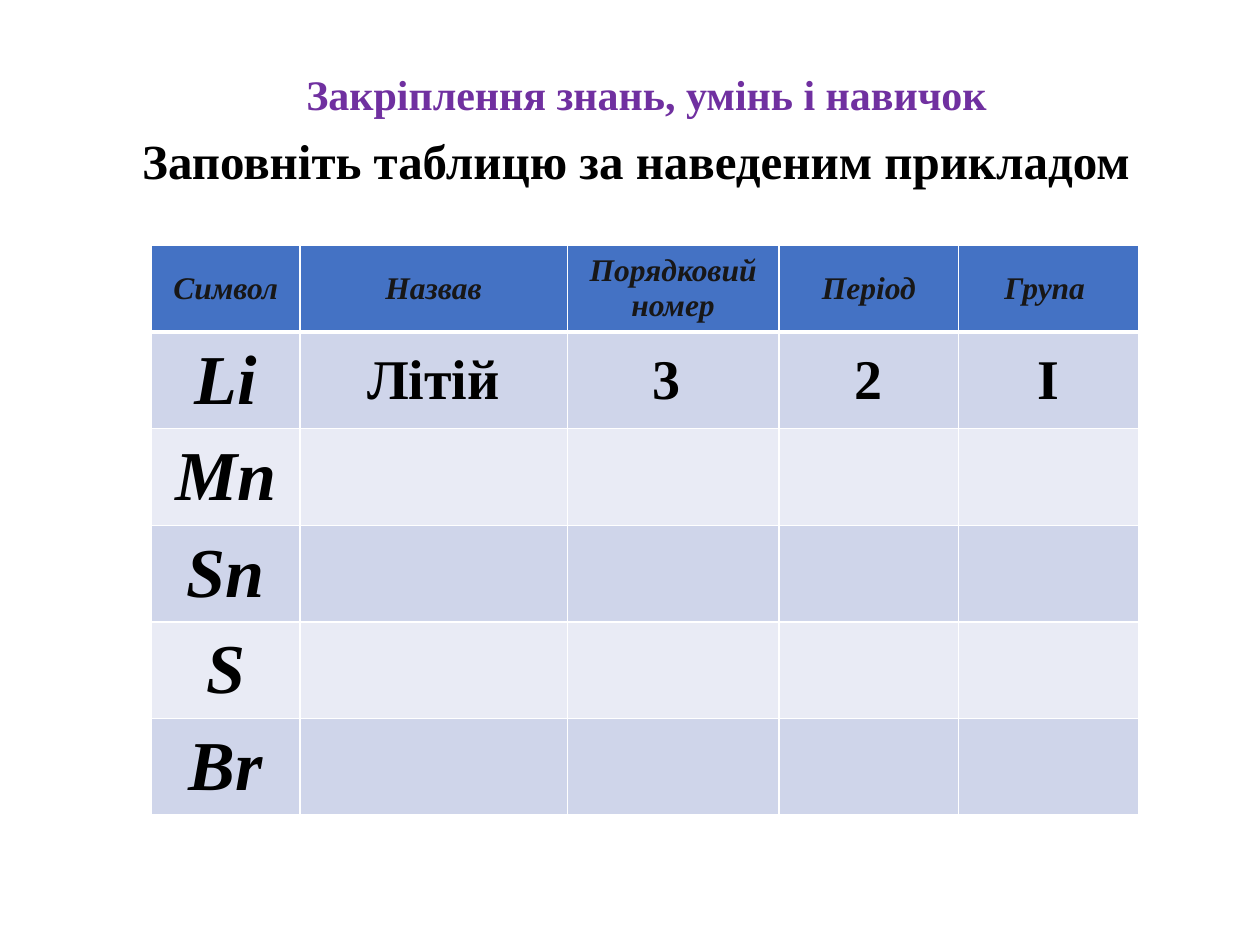
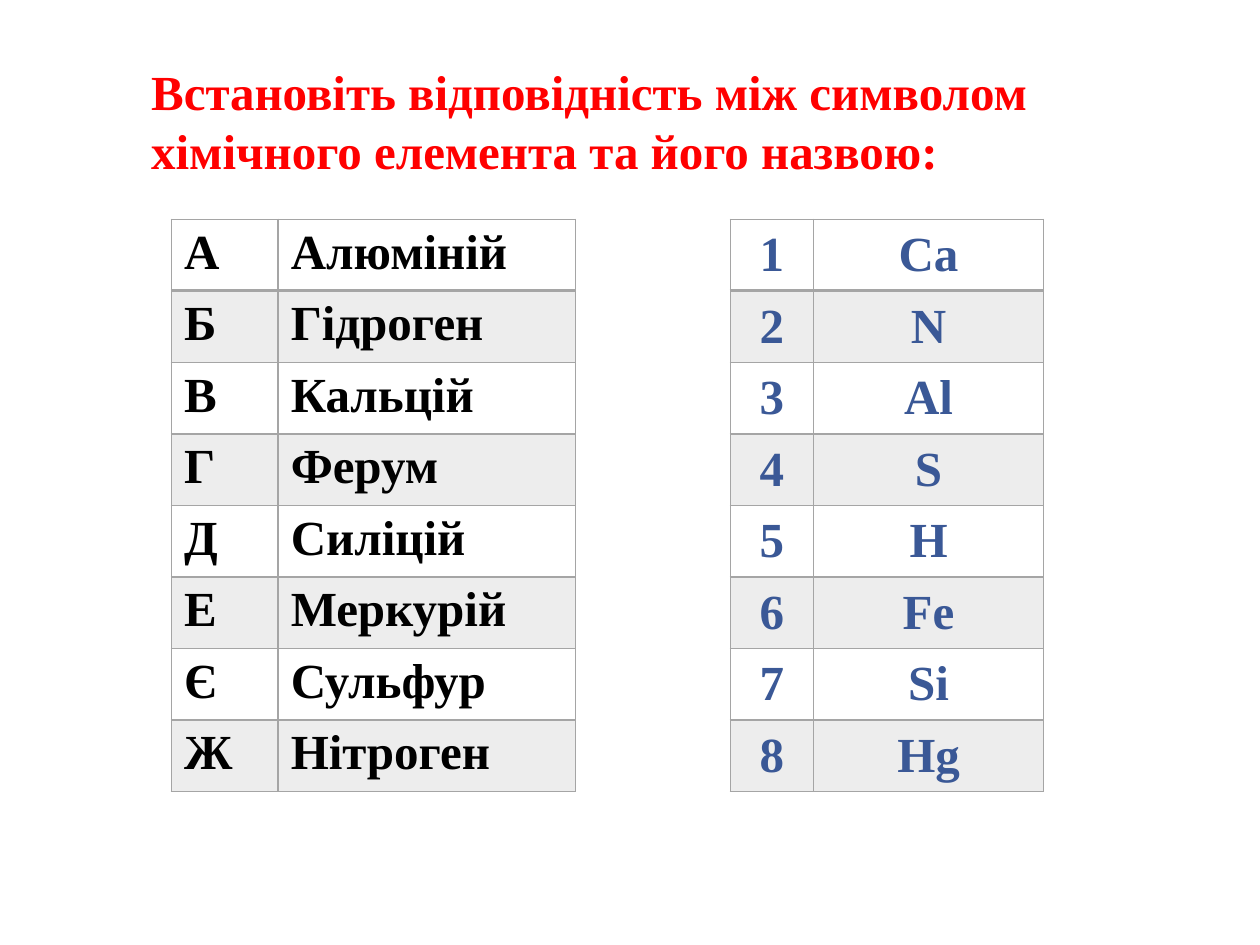
import itertools

import pptx
import pptx.dml.color
import pptx.enum.text
import pptx.oxml
import pptx.oxml.ns
import pptx.util

Pt = pptx.util.Pt
ANCHOR = pptx.enum.text.MSO_ANCHOR
ALIGN = pptx.enum.text.PP_ALIGN

FONT = "Times New Roman"
BLACK, WHITE = "000000", "FFFFFF"
PURPLE, RED, NAVY, INK = "7030A0", "FF0000", "3A5896", "181717"
HEADER_BLUE, BAND_DARK, BAND_LIGHT = "4472C4", "CFD5EA", "E9EBF5"
RULE_GREY, BAND_GREY = "A5A5A5", "EDEDED"

ELEMENT_ROWS = [
    ["Символ", "Назвав", "Порядковий\nномер", "Період", "Група "],
    ["Li", "Літій", "3 ", "2", "І"],
    *([symbol, "", "", "", ""] for symbol in ("Mn", "Sn", "S", "Br")),
]
ELEMENT_NAMES = ["Алюміній", "Гідроген", "Кальцій", "Ферум",
                 "Силіцій", "Меркурій", "Сульфур", "Нітроген"]
SYMBOLS = ["Сa", "N", "Al", "S", "H", "Fe", "Si", "Hg"]


def rgb(hex_colour):
    return pptx.dml.color.RGBColor.from_string(hex_colour)


def write(frame, text, size, colour, italic=False, align=ALIGN.LEFT):
    """Fill a text frame with bold text, one paragraph per line."""
    for number, line in enumerate(text.split("\n")):
        paragraph = frame.paragraphs[0] if number == 0 else frame.add_paragraph()
        paragraph.alignment = align
        run = paragraph.add_run()
        run.text = line
        font = run.font
        font.name, font.size, font.bold, font.italic = FONT, Pt(size), True, italic
        font.color.rgb = rgb(colour)


def place_heading(heading, box, text, size, colour):
    heading.left, heading.top, heading.width, heading.height = map(Pt, box)
    frame = heading.text_frame
    frame.word_wrap = True
    frame.auto_size = pptx.enum.text.MSO_AUTO_SIZE.NONE
    frame.vertical_anchor = ANCHOR.TOP
    write(frame, text, size, colour)


def set_borders(cell, colour, top=1, bottom=1):
    properties = cell._tc.get_or_add_tcPr()
    for side, width in (("L", 1), ("R", 1), ("T", top), ("B", bottom)):
        properties.append(pptx.oxml.parse_xml(
            f'<a:ln{side} {pptx.oxml.ns.nsdecls("a")} w="{Pt(width)}">'
            f'<a:solidFill><a:srgbClr val="{colour}"/></a:solidFill></a:ln{side}>'))


def add_grid(slide, left, top, widths, heights, rule_colour, first_rule):
    """Add a ruled table with a heavier line under its first row."""
    table = slide.shapes.add_table(
        len(heights), len(widths), Pt(left), Pt(top),
        Pt(sum(widths)), Pt(sum(heights))).table
    table.first_row = table.horz_banding = False
    for column, width in zip(table.columns, widths):
        column.width = Pt(width)
    for row, height in zip(table.rows, heights):
        row.height = Pt(height)
    for r, c in itertools.product(range(len(heights)), range(len(widths))):
        set_borders(table.cell(r, c), rule_colour,
                    top=first_rule if r == 1 else 1,
                    bottom=first_rule if r == 0 else 1)
    return table


def paint(cell, colour):
    cell.fill.solid()
    cell.fill.fore_color.rgb = rgb(colour)


def add_element_table(slide, left, top):
    table = add_grid(slide, left, top, [84.8, 152.8, 121, 102.7, 102.7],
                     [49.8] + [55.2] * 5, WHITE, first_rule=3)
    for r, values in enumerate(ELEMENT_ROWS):
        for c, value in enumerate(values):
            cell = table.cell(r, c)
            cell.vertical_anchor = ANCHOR.MIDDLE
            if r == 0:
                fill, size, colour = HEADER_BLUE, 18, INK
            else:
                fill = BAND_DARK if r % 2 else BAND_LIGHT
                size, colour = (40 if c == 0 else 32), BLACK
            paint(cell, fill)
            if value:
                write(cell.text_frame, value, size, colour,
                      italic=r == 0 or c == 0, align=ALIGN.CENTER)


def add_matching_table(slide, left, top, widths, pairs, colour, align, anchor):
    table = add_grid(slide, left, top, widths, [40.85] * len(pairs),
                     RULE_GREY, first_rule=2)
    for r, pair in enumerate(pairs):
        for c, value in enumerate(pair):
            cell = table.cell(r, c)
            cell.vertical_anchor = anchor
            if r % 2:
                paint(cell, BAND_GREY)
            else:
                cell.fill.background()
            write(cell.text_frame, value, 28, colour, align=align)


def add_titled_slide(deck, box, text, size, colour):
    slide = deck.slides.add_slide(deck.slide_layouts.get_by_name("Title Only"))
    place_heading(slide.shapes.title, box, text, size, colour)
    return slide


def build_fill_in_slide(deck):
    slide = add_titled_slide(deck, (167.8, 35.3, 517, 36),
                             "Закріплення знань, умінь і навичок", 24, PURPLE)
    task_box = (74.2, 71.3, 588.2, 74.9)
    task = slide.shapes.add_textbox(*map(Pt, task_box))
    place_heading(task, task_box, "Заповніть таблицю за наведеним прикладом", 28, BLACK)
    add_element_table(slide, 86.6, 140)


def build_matching_slide(deck):
    slide = add_titled_slide(
        deck, (79.2, 31.7, 588.2, 74.9),
        "Встановіть відповідність між символом хімічного елемента та його назвою:",
        28, RED)
    top = 125.4
    add_matching_table(slide, 98, top, [61, 170], list(zip("АБВГДЕЄЖ", ELEMENT_NAMES)),
                       BLACK, ALIGN.LEFT, ANCHOR.TOP)
    add_matching_table(slide, 417.4, top, [47.4, 131.6], list(zip("12345678", SYMBOLS)),
                       NAVY, ALIGN.CENTER, ANCHOR.MIDDLE)


def main():
    deck = pptx.Presentation()
    deck.slide_width, deck.slide_height = Pt(720), Pt(540)
    build_fill_in_slide(deck)
    build_matching_slide(deck)
    deck.save("out.pptx")


if __name__ == "__main__":
    main()
